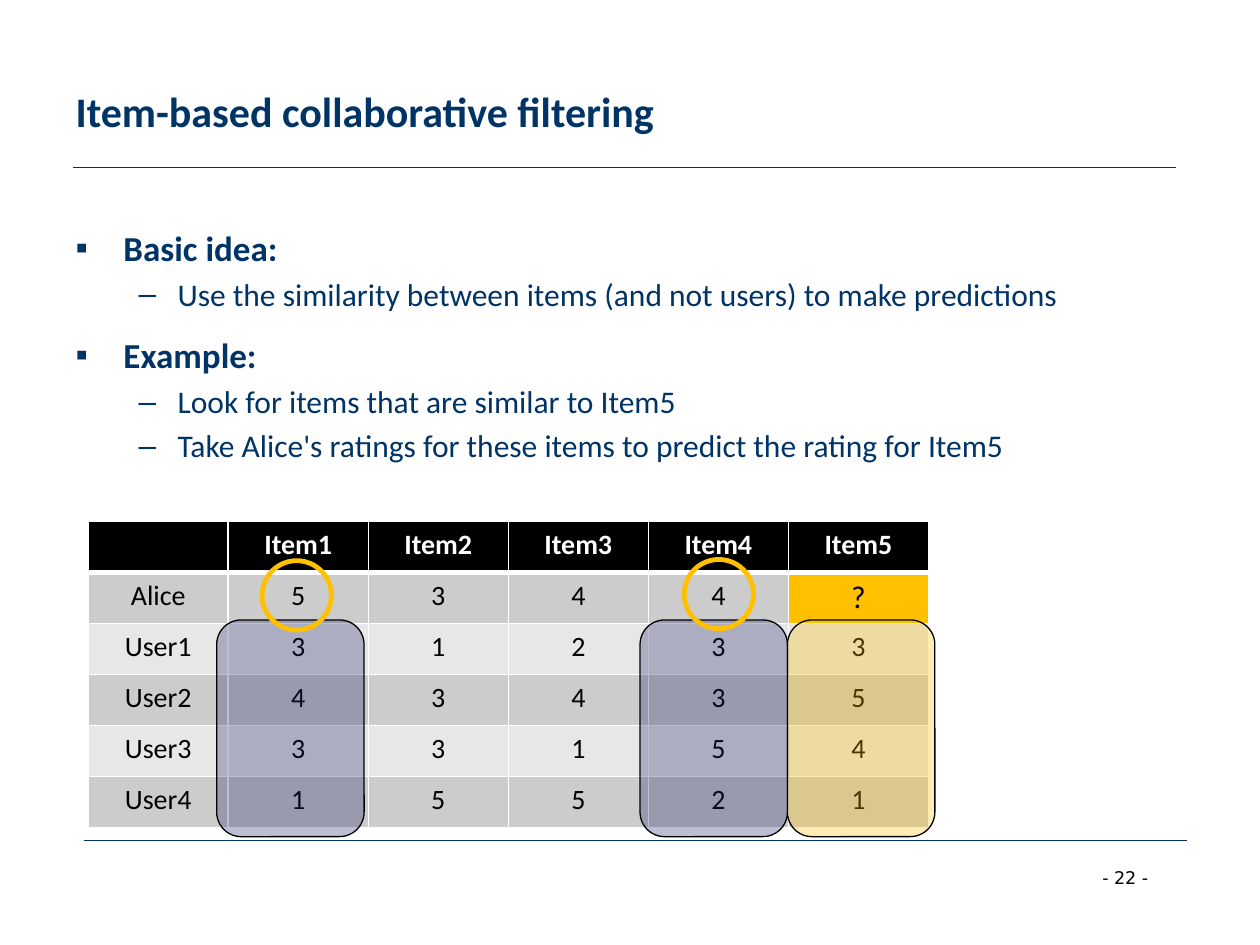
"""Build the item-based collaborative filtering slide."""
from lxml import etree
from pptx import Presentation
from pptx.dml.color import RGBColor
from pptx.enum import shapes, text
from pptx.oxml import ns
from pptx.util import Inches, Pt

THEME = {
    "font": "Calibri", "number_font": "DejaVu Sans",
    "navy": "003366", "black": "000000", "white": "FFFFFF",
    "amber": "FFC000", "violet": "222267", "bands": ("CCCCCC", "E7E7E7"),
    "title": 24, "topic": 20, "point": 18, "cell": 16, "unknown": 18, "number": 10,
    "rule": 0.75, "ring": 2.75, "alpha": 29,
}
TITLE = "Item-based collaborative filtering"
PAGE_NUMBER = "- 22 -"
OUTLINE = [
    ("Basic idea:", ["Use the similarity between items (and not users) to make predictions"]),
    ("Example:", ["Look for items that are similar to Item5",
                  "Take Alice's ratings for these items to predict the rating for Item5"]),
]
RATINGS = [
    ("", "Item1", "Item2", "Item3", "Item4", "Item5"),
    ("Alice", "5", "3", "4", "4", "?"),
    ("User1", "3", "1", "2", "3", "3"),
    ("User2", "4", "3", "4", "3", "5"),
    ("User3", "3", "3", "1", "5", "4"),
    ("User4", "1", "5", "5", "2", "1"),
]
RULES = [(0.58, 1.33), (0.67, 6.67)]
RULE_LENGTH = 8.75
TABLE_BOX = (0.7, 4.14, 6.67, 2.43)
PREDICTED_COLUMN = (6.25, 4.92)
SIMILAR_COLUMNS = [(1.72, 4.92), (5.08, 4.92)]
COLUMN_SIZE = (1.17, 1.72)
ALICE_RINGS = [(2.08, 4.45), (5.43, 4.44)]
RING_SIZE = (0.55, 0.55)


def rgb(name):
    return RGBColor.from_string(THEME.get(name, name))


def inches(values):
    return [Inches(value) for value in values]


def place(part, box):
    part.left, part.top, part.width, part.height = inches(box)


def add_run(paragraph, words, size, color, bold=False, font="font"):
    run = paragraph.add_run()
    run.text = words
    run.font.name = THEME[font]
    run.font.size = Pt(THEME[size])
    run.font.bold = bold
    run.font.color.rgb = rgb(color)


def add_rule(slide, left, top):
    rule = slide.shapes.add_connector(
        shapes.MSO_CONNECTOR.STRAIGHT, *inches((left, top, left + RULE_LENGTH, top)))
    rule.line.color.rgb = rgb("navy")
    rule.line.width = Pt(THEME["rule"])
    etree.SubElement(rule._element.spPr, ns.qn("a:effectLst"))


def add_title(slide):
    title = slide.shapes.title
    place(title, (0.5, 0.25, 9, 1.25))
    title.text_frame.vertical_anchor = text.MSO_ANCHOR.MIDDLE
    title.text_frame.auto_size = text.MSO_AUTO_SIZE.NONE
    heading = title.text_frame.paragraphs[0]
    heading.alignment = text.PP_ALIGN.LEFT
    add_run(heading, TITLE, "title", "navy", True)


def add_outline(slide):
    body = slide.placeholders[1]
    place(body, (0.5, 1.75, 9, 4.95))
    frame = body.text_frame
    frame.auto_size = text.MSO_AUTO_SIZE.NONE
    entries = [(words, level) for topic, points in OUTLINE
               for words, level in [(topic, 0)] + [(point, 1) for point in points]]
    styles = [("topic", 12, 0.38, -0.38, "▪"), ("point", 3.6, 0.81, -0.31, "–")]
    for index, (words, level) in enumerate(entries):
        paragraph = frame.add_paragraph() if index else frame.paragraphs[0]
        size, before, margin, indent, bullet = styles[level]
        paragraph.level = level
        paragraph.space_before = Pt(before)
        properties = paragraph._p.get_or_add_pPr()
        properties.set("marL", str(Inches(margin)))
        properties.set("indent", str(Inches(indent)))
        etree.SubElement(properties, ns.qn("a:buChar"), char=bullet)
        add_run(paragraph, words, size, "navy", level == 0)


def add_borders(cell, bottom):
    properties = cell._tc.get_or_add_tcPr()
    for side, width in (("L", 1), ("R", 1), ("T", 1), ("B", bottom)):
        border = etree.SubElement(properties, ns.qn(f"a:ln{side}"), w=str(Pt(width)))
        fill = etree.SubElement(border, ns.qn("a:solidFill"))
        etree.SubElement(fill, ns.qn("a:srgbClr"), val=THEME["white"])


def add_ratings(slide):
    table = slide.shapes.add_table(len(RATINGS), len(RATINGS[0]), *inches(TABLE_BOX)).table
    for r, ratings in enumerate(RATINGS):
        header = r == 0
        for c, rating in enumerate(ratings):
            cell = table.cell(r, c)
            unknown = rating == "?"
            band = "black" if header else THEME["bands"][(r - 1) % 2]
            add_borders(cell, 3 if header or r == 0 else 1)
            cell.fill.solid()
            cell.fill.fore_color.rgb = rgb("amber" if unknown else band)
            paragraph = cell.text_frame.paragraphs[0]
            paragraph.alignment = text.PP_ALIGN.CENTER
            if rating:
                add_run(paragraph, rating, "unknown" if unknown else "cell",
                        "white" if header else "black", header)


def add_mark(parent, preset, corner, size, line, width, fill=None):
    mark = parent.shapes.add_shape(preset, *inches(corner + size))
    mark.shadow.inherit = False
    mark.line.color.rgb = rgb(line)
    mark.line.width = Pt(THEME[width])
    if fill is None:
        mark.fill.background()
        return
    mark.fill.solid()
    mark.fill.fore_color.rgb = rgb(fill)
    color = mark._element.spPr.find(ns.qn("a:solidFill"))[0]
    etree.SubElement(color, ns.qn("a:alpha"), val=str(THEME["alpha"] * 1000))


def add_highlights(slide):
    rounded, oval = shapes.MSO_SHAPE.ROUNDED_RECTANGLE, shapes.MSO_SHAPE.OVAL
    add_mark(slide, rounded, PREDICTED_COLUMN, COLUMN_SIZE, "black", "rule", "amber")
    similar = slide.shapes.add_group_shape()
    for corner in SIMILAR_COLUMNS:
        add_mark(similar, rounded, corner, COLUMN_SIZE, "black", "rule", "violet")
    rings = slide.shapes.add_group_shape()
    for corner in ALICE_RINGS:
        add_mark(rings, oval, corner, RING_SIZE, "amber", "ring")


def add_page_number(slide):
    number = slide.shapes.add_textbox(*inches((8.65, 6.83, 0.76, 0.27)))
    number.text_frame.word_wrap = False
    add_run(number.text_frame.paragraphs[0], PAGE_NUMBER, "number", "black",
            font="number_font")


def main():
    deck = Presentation()
    deck.slide_width, deck.slide_height = inches((10, 7.5))
    slide = deck.slides.add_slide(deck.slide_layouts[1])
    for corner in RULES:
        add_rule(slide, *corner)
    add_page_number(slide)
    add_title(slide)
    add_outline(slide)
    add_ratings(slide)
    add_highlights(slide)
    deck.save("out.pptx")


if __name__ == "__main__":
    main()
